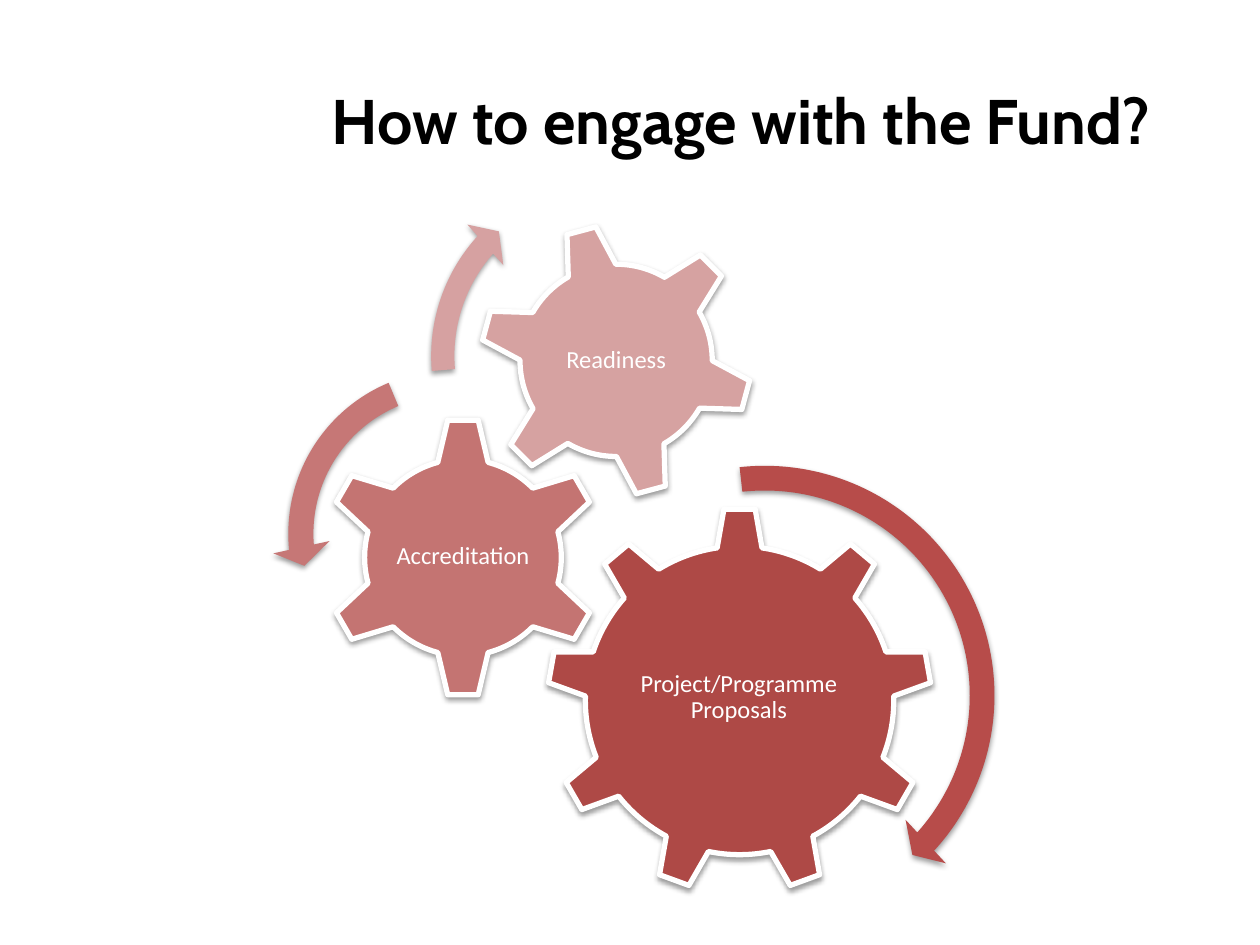
from lxml import etree
from pptx import Presentation
from pptx.dml.color import RGBColor
from pptx.enum import shapes, text
from pptx.oxml import ns
from pptx.util import Inches, Pt

COLORS = {
    "title": "000000", "white": "FFFFFF", "shadow": "000000",
    "proposals": "AE4946", "accreditation": "C47472", "readiness": "D6A2A1",
    "proposals_arrow": "B74C4A", "accreditation_arrow": "C67776", "readiness_arrow": "D6A1A1",
}
KINDS = shapes.MSO_SHAPE

deck = Presentation()
deck.slide_width, deck.slide_height = Inches(10), Inches(7.5)
slide = deck.slides.add_slide(deck.slide_layouts[6])


def add_part(kind, left, top, size, color):
    part = slide.shapes.add_shape(kind, Inches(left), Inches(top), Inches(size), Inches(size))
    part.fill.solid()
    part.fill.fore_color.rgb = RGBColor.from_string(COLORS[color])
    part.line.fill.background()
    part.shadow.inherit = False
    effects = part._element.spPr.find(ns.qn("a:effectLst"))
    shadow = etree.SubElement(effects, ns.qn("a:outerShdw"), blurRad=str(Pt(3.1)),
                              dist=str(Pt(1.6)), dir="5400000", rotWithShape="0")
    tint = etree.SubElement(shadow, ns.qn("a:srgbClr"), val=COLORS["shadow"])
    etree.SubElement(tint, ns.qn("a:alpha"), val="38000")
    return part


def add_text(words, box, font, size, color, align, inset):
    label = slide.shapes.add_textbox(*map(Inches, box))
    frame = label.text_frame
    frame.word_wrap = True
    frame.vertical_anchor = text.MSO_ANCHOR.MIDDLE
    frame.margin_left = frame.margin_right = Inches(inset)
    frame.margin_top = frame.margin_bottom = Inches(min(inset, 0.05))
    frame.text = words
    paragraph = frame.paragraphs[0]
    paragraph.alignment = align
    paragraph.font.name = font
    paragraph.font.size = Pt(size)
    paragraph.font.color.rgb = RGBColor.from_string(COLORS[color])
    return paragraph


title = add_text("How to engage with the Fund?", (1.96, 0.64, 7.27, 0.62),
                 "Cabin", 36, "title", text.PP_ALIGN.RIGHT, 0.1)
title.font.bold = True

gears = [
    ("Project/Programme Proposals", KINDS.GEAR_9, 4.34, 4.03, 3.06, 0,
     "proposals", (4.95, 4.75, 1.83, 1.57)),
    ("Accreditation", KINDS.GEAR_6, 2.56, 3.31, 2.23, 0,
     "accreditation", (3.12, 3.87, 1.11, 1.1)),
    ("Readiness", KINDS.GEAR_6, 3.8, 1.77, 2.18, 345,
     "readiness", (4.28, 2.25, 1.22, 1.22)),
]
for step, kind, left, top, size, turn, color, label_box in gears:
    gear = add_part(kind, left, top, size, color)
    gear.rotation = turn
    gear.line.color.rgb = RGBColor.from_string(COLORS["white"])
    gear.line.width = Pt(3)
    caption = add_text(step, label_box, "Calibri", 14, "white", text.PP_ALIGN.CENTER, 0.02)
    caption.line_spacing = 0.9

arrows = [
    (KINDS.CIRCULAR_ARROW, 4.11, 3.56, 3.92, "proposals_arrow",
     (0.05, 2.99, 25.34, 158.23, 0.06)),
    (KINDS.LEFT_CIRCULAR_ARROW, 2.16, 2.81, 2.85, "accreditation_arrow",
     (0.07, 4.3, 104.89, 148.38, 0.08)),
    (KINDS.CIRCULAR_ARROW, 3.3, 1.29, 3.07, "readiness_arrow",
     (0.06, 3.94, 133.14, 105.08, 0.07)),
]
for kind, left, top, size, color, bends in arrows:
    arrow = add_part(kind, left, top, size, color)
    for index, bend in enumerate(bends):
        arrow.adjustments[index] = bend

deck.save("out.pptx")
